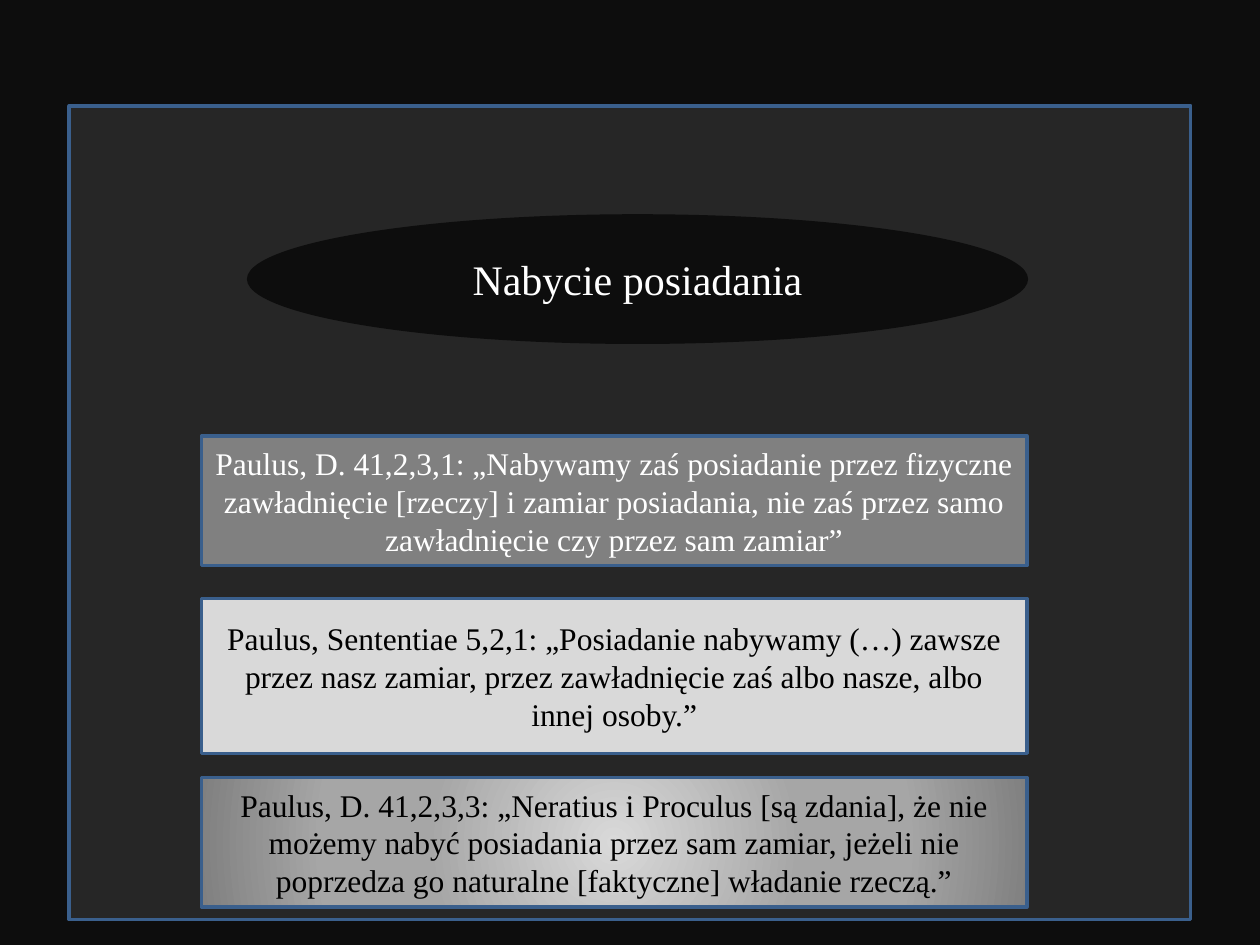
import dataclasses

import lxml.etree
import pptx
import pptx.dml.color
import pptx.enum.shapes
import pptx.enum.text
import pptx.oxml
import pptx.oxml.ns
import pptx.util


@dataclasses.dataclass(frozen=True)
class Theme:
    font: str = "Times New Roman"
    title_size: int = 24
    quote_size: int = 18
    outline_width: int = 2
    backdrop: str = "0D0D0D"
    panel: str = "262626"
    outline: str = "3A5F8C"
    light_text: str = "FFFFFF"
    dark_text: str = "000000"
    medium: str = "808080"
    pale: str = "D9D9D9"
    glow: tuple = ((0, "D9D9D9"), (45, "A6A6A6"), (70, "A6A6A6"), (100, "808080"))


THEME = Theme()
PAGE_WIDTH = pptx.util.Inches(10)
PAGE_HEIGHT = pptx.util.Inches(7.5)
PANEL_BOX = (5.5, 11.2, 89, 86.13)
TITLE_BOX = (19.6, 22.67, 62, 13.73)
QUOTES_LEFT, QUOTES_WIDTH = 16, 65.5

QUOTES = [
    (46.13, 13.73, THEME.medium, THEME.light_text,
     "Paulus, D. 41,2,3,1: „Nabywamy zaś posiadanie przez fizyczne zawładnięcie [rzeczy] "
     "i zamiar posiadania, nie zaś przez samo zawładnięcie czy przez sam zamiar”"),
    (63.33, 16.4, THEME.pale, THEME.dark_text,
     "Paulus, Sententiae 5,2,1: „Posiadanie nabywamy (…) zawsze przez nasz zamiar, "
     "przez zawładnięcie zaś albo nasze, albo innej osoby.”"),
    (82.27, 13.73, THEME.glow, THEME.dark_text,
     "Paulus, D. 41,2,3,3: „Neratius i Proculus [są zdania], że nie możemy nabyć posiadania "
     "przez sam zamiar, jeżeli nie poprzedza go naturalne [faktyczne] władanie rzeczą.”"),
]


def color(value):
    return pptx.dml.color.RGBColor.from_string(value)


def to_lengths(box):
    left, top, width, height = box
    return (int(PAGE_WIDTH * left / 100), int(PAGE_HEIGHT * top / 100),
            int(PAGE_WIDTH * width / 100), int(PAGE_HEIGHT * height / 100))


def fill_radial(shape, stops):
    shape.fill.solid()
    properties = shape.fill._xPr
    solid = properties.find(pptx.oxml.ns.qn("a:solidFill"))
    stop_xml = "".join(
        f'<a:gs pos="{share * 1000}"><a:srgbClr val="{value}"/></a:gs>' for share, value in stops)
    gradient = pptx.oxml.parse_xml(
        f'<a:gradFill {pptx.oxml.ns.nsdecls("a")} rotWithShape="1"><a:gsLst>{stop_xml}</a:gsLst>'
        '<a:path path="circle"><a:fillToRect l="50000" t="50000" r="50000" b="50000"/></a:path>'
        '</a:gradFill>')
    properties.replace(solid, gradient)


def add_block(page, box, kind, fill, outlined=True):
    shape = page.shapes.add_shape(kind, *to_lengths(box))
    shape.shadow.inherit = False
    if isinstance(fill, tuple):
        fill_radial(shape, fill)
    else:
        shape.fill.solid()
        shape.fill.fore_color.rgb = color(fill)
    if outlined:
        shape.line.color.rgb = color(THEME.outline)
        shape.line.width = pptx.util.Pt(THEME.outline_width)
    else:
        shape.line.fill.background()
    return shape


def write_text(shape, text, size, text_color):
    frame = shape.text_frame
    frame.word_wrap = True
    frame.auto_size = pptx.enum.text.MSO_AUTO_SIZE.NONE
    frame.vertical_anchor = pptx.enum.text.MSO_ANCHOR.MIDDLE
    para = frame.paragraphs[0]
    para.alignment = pptx.enum.text.PP_ALIGN.CENTER
    span = para.add_run()
    span.text = text
    span.font.name = THEME.font
    span.font.size = pptx.util.Pt(size)
    span.font.color.rgb = color(text_color)


def add_panel(page, box):
    add_block(page, box, pptx.enum.shapes.MSO_SHAPE.RECTANGLE, THEME.panel)


def add_title(page, box):
    ellipse = add_block(page, box, pptx.enum.shapes.MSO_SHAPE.OVAL, THEME.backdrop, outlined=False)
    title = page.shapes.title
    title.left, title.top, title.width, title.height = to_lengths(box)
    write_text(title, "Nabycie posiadania", THEME.title_size, THEME.light_text)
    ellipse._element.addnext(title._element)


def add_quote(page, box, fill, text_color, text):
    quote = add_block(page, box, pptx.enum.shapes.MSO_SHAPE.RECTANGLE, fill)
    write_text(quote, text, THEME.quote_size, text_color)


def main():
    deck = pptx.Presentation()
    deck.slide_width, deck.slide_height = PAGE_WIDTH, PAGE_HEIGHT
    page = deck.slides.add_slide(deck.slide_layouts.get_by_name("Title Only"))
    page.background.fill.solid()
    page.background.fill.fore_color.rgb = color(THEME.backdrop)
    add_panel(page, PANEL_BOX)
    add_title(page, TITLE_BOX)
    for top, height, fill, text_color, text in QUOTES:
        add_quote(page, (QUOTES_LEFT, top, QUOTES_WIDTH, height), fill, text_color, text)
    deck.save("out.pptx")


if __name__ == "__main__":
    main()
